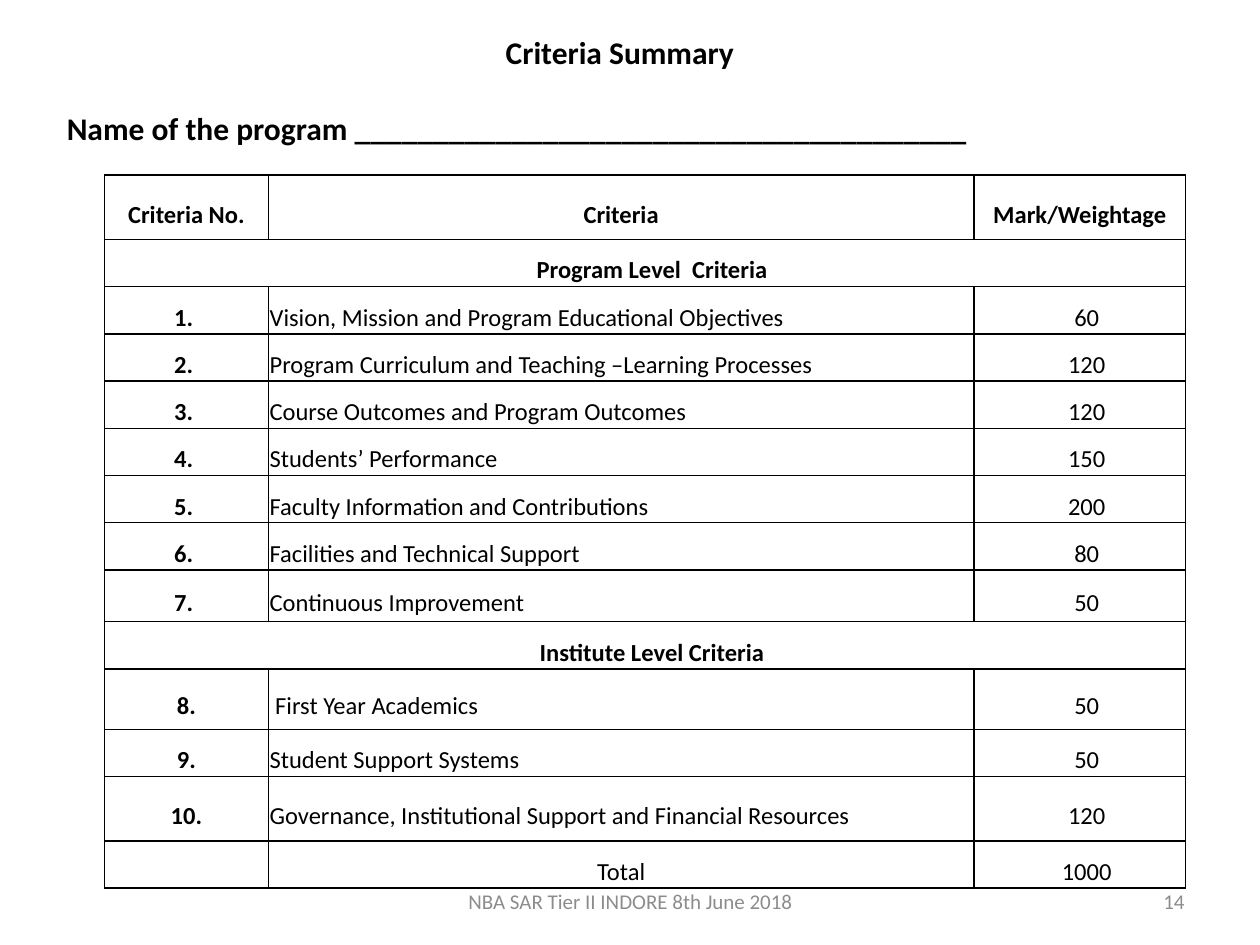
from lxml.etree import SubElement
from pptx import Presentation
from pptx.dml.color import RGBColor
from pptx.enum.text import MSO_ANCHOR as Anchor, PP_ALIGN as Align
from pptx.oxml.ns import qn
from pptx.util import Inches, Pt

COLORS = {"text": "000000", "border": "000000", "cell": "FFFFFF", "footer": "8C8C8C"}
FONT = "Calibri"

COLUMN_WIDTHS = [1.3, 5.6, 1.68]
ROW_HEIGHTS = [0.51] + [0.31] * 7 + [0.41, 0.32, 0.48, 0.31, 0.51, 0.31]
ROWS = [
    ("Criteria No.", "Criteria", "Mark/Weightage"),
    ("Program Level  Criteria",),
    ("1. ", "Vision, Mission and Program Educational Objectives", "60"),
    ("2. ", "Program Curriculum and Teaching –Learning Processes", "120"),
    ("3. ", "Course Outcomes and Program Outcomes", "120"),
    ("4. ", "Students’ Performance", "150"),
    ("5. ", "Faculty Information and Contributions", "200"),
    ("6. ", "Facilities and Technical Support", "80"),
    ("7. ", "Continuous Improvement", "50"),
    ("Institute Level Criteria",),
    ("8.", " First Year Academics", "50"),
    ("9.", "Student Support Systems", "50"),
    ("10.", "Governance, Institutional Support and Financial Resources", "120"),
    ("", "Total", "1000"),
]


def style_paragraph(para, size, color, align, bold=False):
    para.alignment = align
    para.font.name = FONT
    para.font.size = Pt(size)
    para.font.bold = bold
    para.font.color.rgb = RGBColor.from_string(COLORS[color])


def add_heading(page):
    title = page.shapes.title
    title.left, title.top = Inches(0.43), Inches(0.21)
    title.width, title.height = Inches(8.98), Inches(1.01)
    frame = title.text_frame
    frame.word_wrap = True
    frame.vertical_anchor = Anchor.TOP
    frame.text = "Criteria Summary\nName of the program " + "_" * 39
    heading, program = frame.paragraphs
    style_paragraph(heading, 18, "text", Align.CENTER, True)
    style_paragraph(program, 18, "text", Align.LEFT, True)
    for para in frame.paragraphs:
        para.space_before = Pt(0)
    heading.space_after = Pt(22)


def add_footer(page, text, left, width, align):
    box = page.shapes.add_textbox(Inches(left), Inches(6.95), Inches(width), Inches(0.4))
    frame = box.text_frame
    frame.word_wrap = True
    frame.vertical_anchor = Anchor.MIDDLE
    frame.text = text
    style_paragraph(frame.paragraphs[0], 12, "footer", align)


def set_borders(cell):
    properties = cell._tc.get_or_add_tcPr()
    for index, side in enumerate(("lnL", "lnR", "lnT", "lnB")):
        line = SubElement(properties, qn(f"a:{side}"), w=str(Pt(1)))
        fill = SubElement(line, qn("a:solidFill"))
        SubElement(fill, qn("a:srgbClr"), val=COLORS["border"])
        properties.remove(line)
        properties.insert(index, line)


def format_cell(cell):
    cell.fill.solid()
    cell.fill.fore_color.rgb = RGBColor.from_string(COLORS["cell"])
    cell.margin_left = cell.margin_right = Inches(0.01)
    cell.margin_top = cell.margin_bottom = Inches(0.01)
    cell.vertical_anchor = Anchor.MIDDLE
    set_borders(cell)


def write_cell(cell, text, align, bold, indented):
    cell.text = text
    if indented:
        cell.margin_left = Inches(0.12)
    para = cell.text_frame.paragraphs[0]
    style_paragraph(para, 14, "text", align, bold)
    if text:
        para.line_spacing = 1.5


def add_criteria_table(page):
    frame = page.shapes.add_table(
        len(ROWS), len(COLUMN_WIDTHS), Inches(0.83), Inches(1.39),
        Inches(sum(COLUMN_WIDTHS)), Inches(sum(ROW_HEIGHTS)))
    table = frame.table
    table.first_row = table.horz_banding = False
    for column, width in zip(table.columns, COLUMN_WIDTHS):
        column.width = Inches(width)
    for row, height in zip(table.rows, ROW_HEIGHTS):
        row.height = Inches(height)
    for cell in table.iter_cells():
        format_cell(cell)
    for r, values in enumerate(ROWS):
        section = len(values) == 1
        if section:
            table.cell(r, 0).merge(table.cell(r, 2))
        for c, text in enumerate(values):
            is_name = c == 1 and 0 < r < len(ROWS) - 1
            write_cell(table.cell(r, c), text,
                       align=Align.LEFT if is_name else Align.CENTER,
                       bold=r == 0 or c == 0,
                       indented=section or (c == 2 and r > 0))


def main():
    deck = Presentation()
    deck.slide_width, deck.slide_height = Inches(10), Inches(7.5)
    page = deck.slides.add_slide(deck.slide_layouts[5])
    add_heading(page)
    add_criteria_table(page)
    add_footer(page, "NBA SAR Tier II INDORE 8th June 2018", 3.42, 3.17, Align.CENTER)
    add_footer(page, "14", 7.17, 2.33, Align.RIGHT)
    deck.save("out.pptx")


if __name__ == "__main__":
    main()
